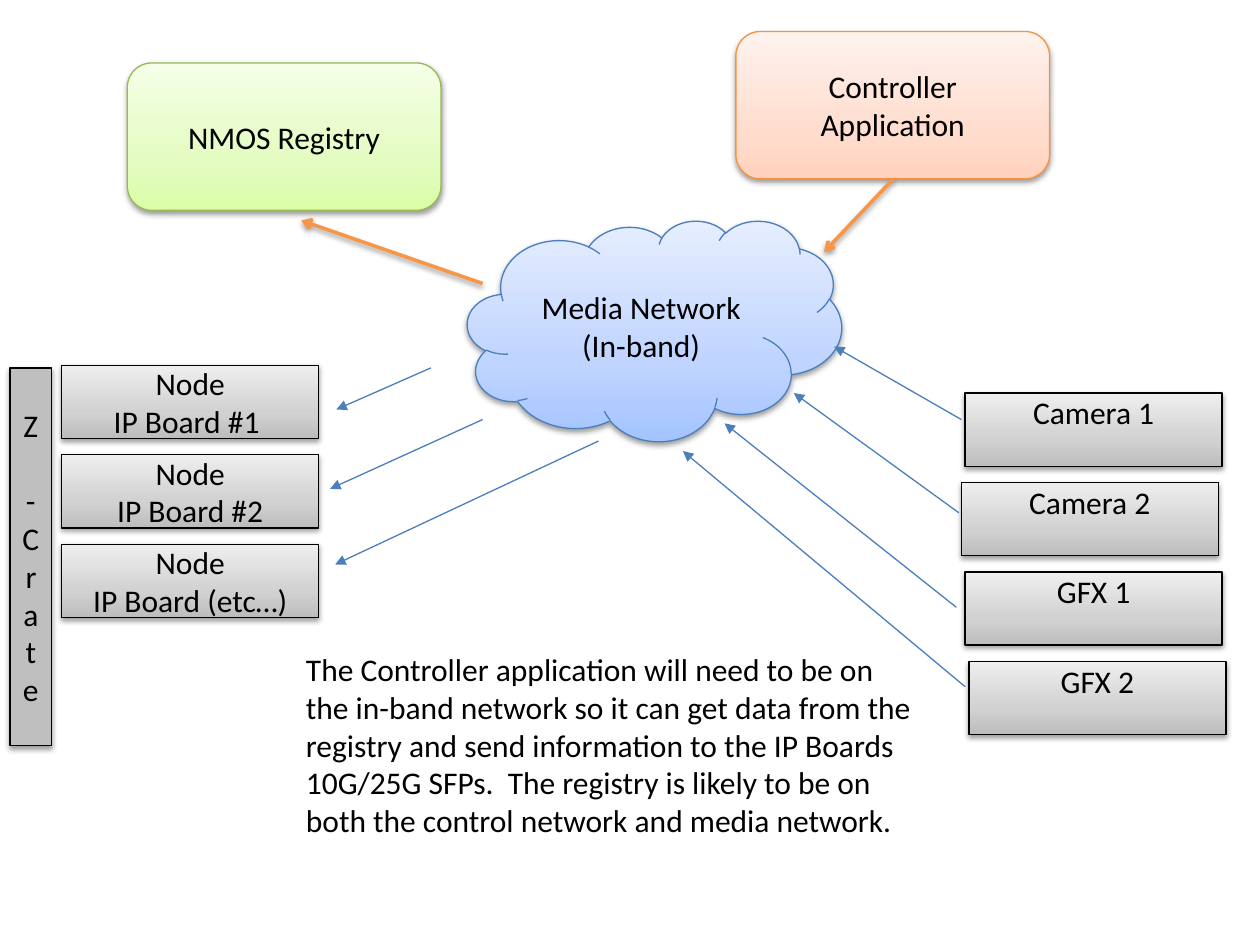
from copy import deepcopy

from lxml import etree
from pptx import Presentation
from pptx.dml.color import RGBColor
from pptx.enum.shapes import MSO_CONNECTOR, MSO_SHAPE
from pptx.enum.text import MSO_ANCHOR, PP_ALIGN
from pptx.oxml.ns import qn
from pptx.util import Inches, Pt

CLOUD, ROUNDED, RECTANGLE = MSO_SHAPE.CLOUD, MSO_SHAPE.ROUNDED_RECTANGLE, MSO_SHAPE.RECTANGLE
STRAIGHT = MSO_CONNECTOR.STRAIGHT
TOP, MIDDLE = MSO_ANCHOR.TOP, MSO_ANCHOR.MIDDLE
LEFT, CENTER = PP_ALIGN.LEFT, PP_ALIGN.CENTER

BLACK, BLUE, ORANGE = "000000", "4B7EBC", "F79646"
BLUE_FADE = ("A4C4FF", "BFD4FF", "E6EEFF")
GREEN_FADE = ("DAFDA7", "E4FCC2", "F5FFE7")
ORANGE_FADE = ("FFD2BD", "FFDED0", "FFF2ED")
GRAY_FADE = ("BDBDBD", "D1D1D1", "EEEEEE")
FADE_POSITIONS = (0, 0.35, 1)
BOX_WIDTH, BOX_HEIGHT, BOX_PITCH = 2.04, 0.58, 0.71

NOTE = (
    "The Controller application will need to be on the in-band network so it can "
    "get data from the registry and send information to the IP Boards 10G/25G SFPs.  "
    "The registry is likely to be on both the control network and media network."
)


def color(hex_value):
    return RGBColor.from_string(hex_value)


def write_text(frame, lines, align, anchor):
    frame.word_wrap = True
    frame.vertical_anchor = anchor
    for index, line in enumerate(lines):
        para = frame.add_paragraph() if index else frame.paragraphs[0]
        para.alignment = align
        span = para.add_run()
        span.text = line
        span.font.name = "Calibri"
        span.font.size = Pt(18)
        span.font.color.rgb = color(BLACK)


def add_shadow(properties):
    effects = properties.find(qn("a:effectLst"))
    shadow = etree.SubElement(effects, qn("a:outerShdw"), blurRad="40000", dist="20000",
                              dir="5400000", rotWithShape="0")
    tint = etree.SubElement(shadow, qn("a:srgbClr"), val=BLACK)
    etree.SubElement(tint, qn("a:alpha"), val="38000")


def fill_fade(shape, fade):
    shape.fill.gradient()
    shape.fill.gradient_angle = 90
    stop_list = shape.element.spPr.find(qn("a:gradFill")).find(qn("a:gsLst"))
    stop_list.append(deepcopy(stop_list[-1]))
    for stop, hex_value, position in zip(shape.fill.gradient_stops, fade, FADE_POSITIONS):
        stop.color.rgb = color(hex_value)
        stop.position = position


def add_box(page, kind, place, lines, fill, outline, anchor=MIDDLE):
    box = page.shapes.add_shape(kind, *map(Inches, place))
    if isinstance(fill, tuple):
        fill_fade(box, fill)
    else:
        box.fill.solid()
        box.fill.fore_color.rgb = color(fill)
    box.line.color.rgb = color(outline)
    box.line.width = Pt(0.75)
    box.shadow.inherit = False
    add_shadow(box.element.spPr)
    write_text(box.text_frame, lines, CENTER, anchor)
    return box


def add_arrow(page, start, end, hex_value=BLUE, width=0.75, head="triangle", shadow=False):
    arrow = page.shapes.add_connector(STRAIGHT, *map(Inches, start + end))
    arrow.line.color.rgb = color(hex_value)
    arrow.line.width = Pt(width)
    properties = arrow.element.spPr
    etree.SubElement(properties.find(qn("a:ln")), qn("a:tailEnd"), type=head)
    etree.SubElement(properties, qn("a:effectLst"))
    if shadow:
        add_shadow(properties)


def add_nodes(page):
    for index, name in enumerate(("IP Board #1 ", "IP Board #2", "IP Board (etc…)")):
        place = (0.49, 2.9 + index * BOX_PITCH, BOX_WIDTH, BOX_HEIGHT)
        add_box(page, RECTANGLE, place, ("Node", name), GRAY_FADE, BLACK)


def add_devices(page):
    devices = (("Camera 1", 7.66), ("Camera 2", 7.63), ("GFX 1", 7.66), ("GFX 2", 7.69))
    for index, (name, left) in enumerate(devices):
        place = (left, 3.12 + index * BOX_PITCH, BOX_WIDTH, BOX_HEIGHT)
        box = add_box(page, RECTANGLE, place, (name,), GRAY_FADE, BLACK, TOP)
        box.text_frame.margin_top = box.text_frame.margin_bottom = 0


def add_note(page):
    box = page.shapes.add_textbox(Inches(2.33), Inches(5.11), Inches(5), Inches(1.92))
    write_text(box.text_frame, (NOTE,), LEFT, TOP)


def main():
    deck = Presentation()
    deck.slide_width, deck.slide_height = Inches(10), Inches(7.5)
    page = deck.slides.add_slide(deck.slide_layouts[6])

    add_box(page, CLOUD, (3.71, 1.75, 2.97, 1.75), ("Media Network", "(In-band)"), BLUE_FADE, BLUE)
    add_box(page, ROUNDED, (1.01, 0.5, 2.49, 1.17), ("NMOS Registry",), GREEN_FADE, "98B955")
    add_box(page, ROUNDED, (5.84, 0.25, 2.49, 1.17), ("Controller Application",),
            ORANGE_FADE, "F69240")
    for start, end in (((7.09, 1.42), (6.54, 2)), ((3.83, 2.25), (2.39, 1.75))):
        add_arrow(page, start, end, ORANGE, 2, "arrow", True)

    add_box(page, RECTANGLE, (0.08, 2.92, 0.33, 3), ("Z  -Crate",), "BFBFBF", BLACK)
    add_nodes(page)
    add_devices(page)
    links = (
        ((3.42, 2.92), (2.67, 3.25)),
        ((3.83, 3.33), (2.62, 3.88)),
        ((4.75, 3.5), (2.66, 4.48)),
        ((7.63, 3.33), (6.62, 2.75)),
        ((7.61, 4.07), (6.3, 3.12)),
        ((7.59, 4.82), (5.75, 3.36)),
        ((7.66, 5.45), (5.42, 3.58)),
    )
    for start, end in links:
        add_arrow(page, start, end)
    add_note(page)
    deck.save("out.pptx")


if __name__ == "__main__":
    main()
